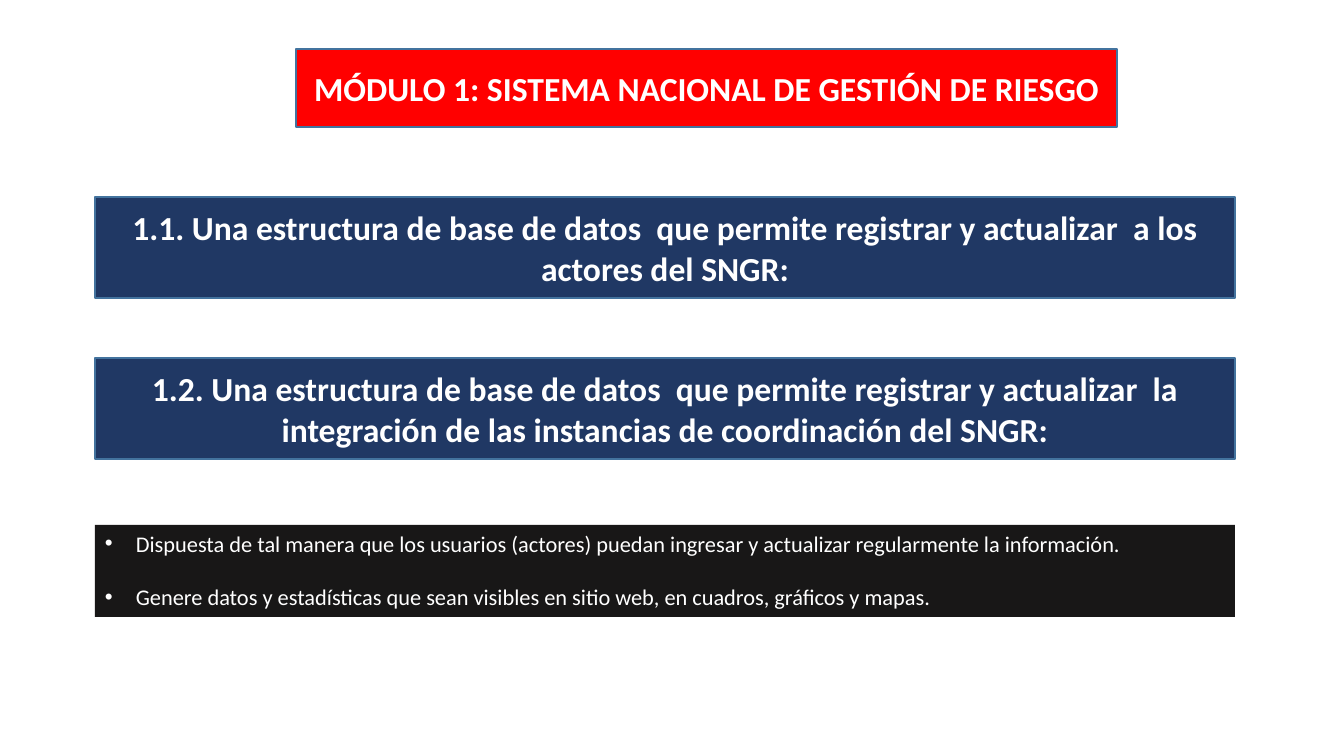
"""Build the slide on module 1, the national risk management system."""
from lxml.etree import SubElement
from pptx import Presentation
from pptx.dml.color import RGBColor
from pptx.enum.shapes import MSO_SHAPE
from pptx.enum.text import MSO_ANCHOR, MSO_AUTO_SIZE, PP_ALIGN
from pptx.oxml.ns import qn
from pptx.util import Emu, Pt

MODULE = "MÓDULO 1: SISTEMA NACIONAL DE GESTIÓN DE RIESGO"
SECTIONS = [
    "1.1. Una estructura de base de datos  que permite registrar y actualizar  a los actores del SNGR:",
    "1.2. Una estructura de base de datos  que permite registrar y actualizar  "
    "la integración de las instancias de coordinación del SNGR:",
]
FEATURES = [
    "Dispuesta de tal manera que los usuarios (actores) puedan ingresar y actualizar "
    "regularmente la información.",
    "Genere datos y estadísticas que sean visibles en sitio web, en cuadros, gráficos y mapas.",
]
COLORS = {"module": "FF0000", "section": "203864", "features": "181717",
          "border": "43739E", "text": "FFFFFF"}
FONT = "Calibri"
PX_PER_INCH = 100.8
SLIDE_SIZE = (1344, 756)
MODULE_BOX = (296, 49, 821, 78)
LEFT, WIDTH = 95, 1140
SECTION_TOP, SECTION_HEIGHT, SECTION_PITCH = 197, 101, 161
FEATURES_TOP, FEATURES_HEIGHT = 525, 92
BULLET_INDENT = 31


def px(length):
    return Emu(round(length * 914400 / PX_PER_INCH))


def color(name):
    return RGBColor.from_string(COLORS[name])


def place(banner, box, fill, border=None):
    banner.left, banner.top, banner.width, banner.height = map(px, box)
    banner.fill.solid()
    banner.fill.fore_color.rgb = color(fill)
    if border:
        banner.line.color.rgb = color(border)
        banner.line.width = Pt(1)
    else:
        banner.line.fill.background()
    banner.text_frame.word_wrap = True


def add_rectangle(slide, box, fill, border=None):
    rectangle = slide.shapes.add_shape(MSO_SHAPE.RECTANGLE, *map(px, box))
    rectangle.shadow.inherit = False
    place(rectangle, box, fill, border)
    return rectangle


def write(paragraph, wording, size, bold, align):
    paragraph.alignment = align
    run = paragraph.add_run()
    run.text = wording
    run.font.name = FONT
    run.font.size = Pt(size)
    run.font.bold = bold
    run.font.color.rgb = color("text")


def write_heading(banner, wording):
    frame = banner.text_frame
    frame.auto_size = MSO_AUTO_SIZE.NONE
    frame.vertical_anchor = MSO_ANCHOR.MIDDLE
    write(frame.paragraphs[0], wording, 24, True, PP_ALIGN.CENTER)


def add_bullet(paragraph):
    properties = paragraph._p.get_or_add_pPr()
    properties.set("marL", str(px(BULLET_INDENT)))
    properties.set("indent", str(-px(BULLET_INDENT)))
    SubElement(properties, qn("a:buFont"), typeface="Arial")
    SubElement(properties, qn("a:buChar"), char="•")


def main():
    deck = Presentation()
    deck.slide_width, deck.slide_height = map(px, SLIDE_SIZE)
    slide = deck.slides.add_slide(deck.slide_layouts[5])

    title = slide.shapes.title
    place(title, MODULE_BOX, "module", "border")
    write_heading(title, MODULE)

    for index, section in enumerate(SECTIONS):
        top = SECTION_TOP + index * SECTION_PITCH
        banner = add_rectangle(slide, (LEFT, top, WIDTH, SECTION_HEIGHT), "section", "border")
        write_heading(banner, section)

    panel = add_rectangle(slide, (LEFT, FEATURES_TOP, WIDTH, FEATURES_HEIGHT), "features")
    frame = panel.text_frame
    frame.auto_size = MSO_AUTO_SIZE.SHAPE_TO_FIT_TEXT
    frame.vertical_anchor = MSO_ANCHOR.TOP
    for index, feature in enumerate(FEATURES):
        paragraph = frame.add_paragraph() if index else frame.paragraphs[0]
        write(paragraph, feature, 16, False, PP_ALIGN.LEFT)
        if index:
            paragraph.space_before = Pt(19)
        add_bullet(paragraph)

    deck.save("out.pptx")


if __name__ == "__main__":
    main()
